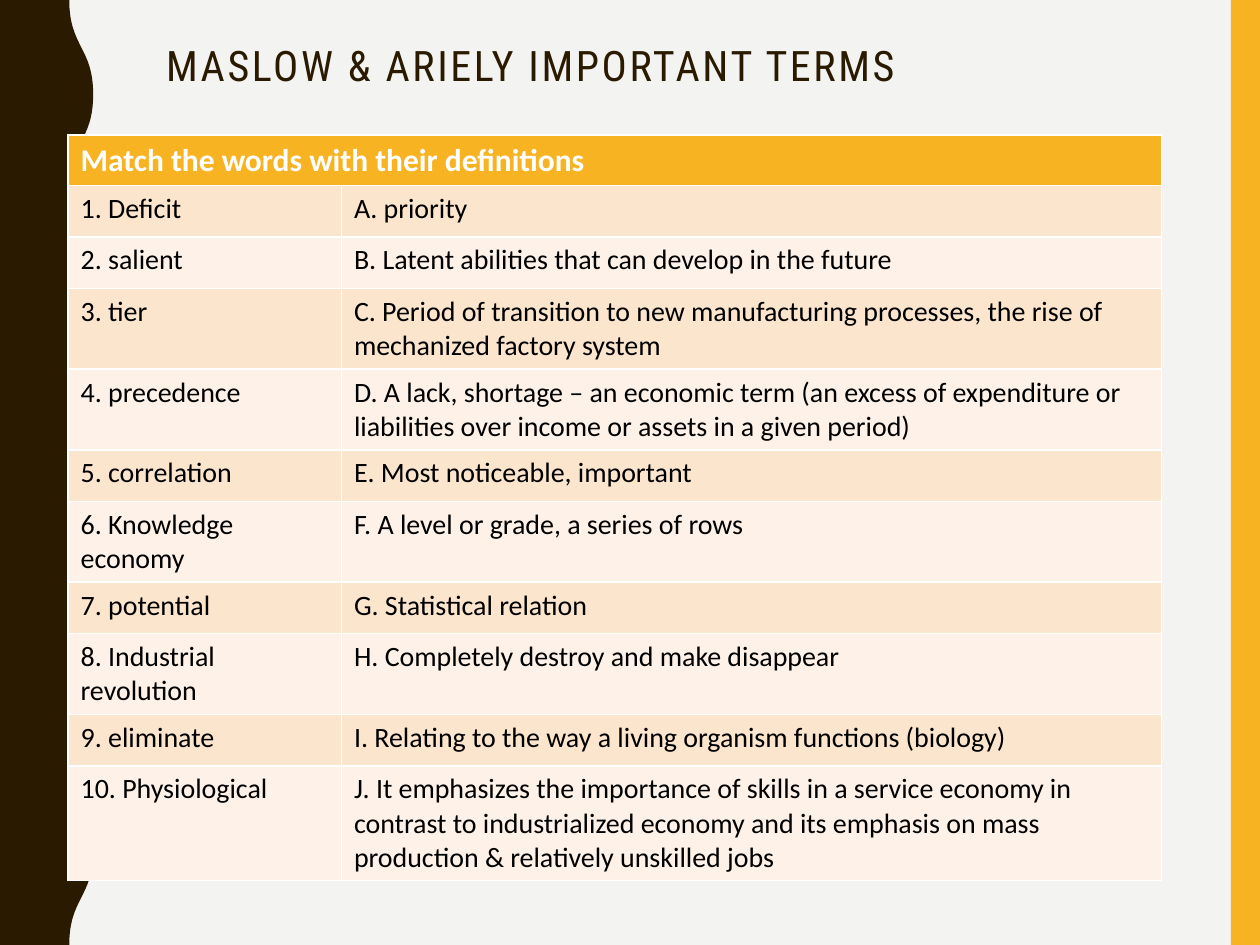
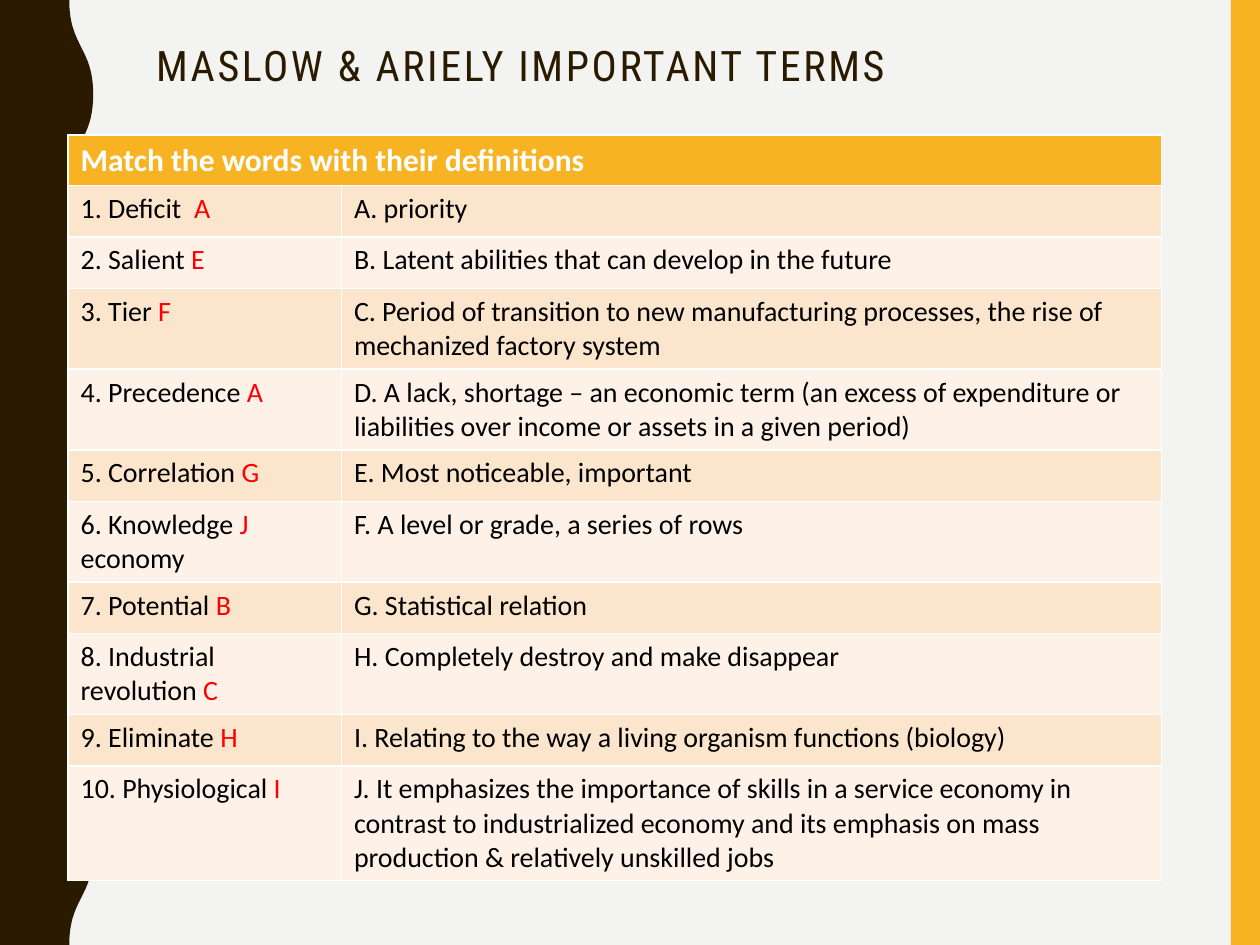
import pptx
import pptx.dml.color
import pptx.enum.shapes
import pptx.enum.text
import pptx.oxml.ns
import pptx.util
from lxml import etree

Inches, Pt = pptx.util.Inches, pptx.util.Pt
RGBColor = pptx.dml.color.RGBColor
qn = pptx.oxml.ns.qn

TITLE = "MASLOW & ARIELY IMPORTANT TERMS"
HEADING = "Match the words with their definitions"
# term ("|" marks where its answer goes), answer, definition, lines of text in the row
ROWS = [
    ("Deficit  |", "A", "priority", 1),
    ("salient |", "E", "Latent abilities that can develop in the future", 1),
    ("tier |", "F", "Period of transition to new manufacturing processes, "
     "the rise of mechanized factory system", 2),
    ("precedence |", "A", "A lack, shortage – an economic term (an excess of "
     "expenditure or liabilities over income or assets in a given period)", 2),
    ("correlation |", "G", "Most noticeable, important", 1),
    ("Knowledge | economy", "J", "A level or grade, a series of rows", 2),
    ("potential |", "B", "Statistical relation", 1),
    ("Industrial revolution |", "C", "Completely destroy and make disappear", 2),
    ("eliminate |", "H", "Relating to the way a living organism functions (biology)", 1),
    ("Physiological |", "I", "It emphasizes the importance of skills in a service "
     "economy in contrast to industrialized economy and its emphasis on mass "
     "production & relatively unskilled jobs", 3),
]
SLIDES = [  # title left, answers shown
    (1.22, False),
    (1.14, True),
]

PAPER = RGBColor(0xF3, 0xF3, 0xF2)
BROWN = RGBColor(0x2A, 0x1A, 0x00)
GOLD = RGBColor(0xF8, 0xB3, 0x23)
BANDS = RGBColor(0xFC, 0xE5, 0xCD), RGBColor(0xFE, 0xF2, 0xE8)
WHITE = RGBColor(0xFF, 0xFF, 0xFF)
BLACK = RGBColor(0, 0, 0)
RED = RGBColor(0xFF, 0, 0)
TITLE_FONT, BODY_FONT = "Roboto Condensed", "Calibri"

WIDTH, HEIGHT = 10, 7.5
STRIPE_W = 0.23
WAVE_MIN, WAVE_MAX, WAVE_STEP = 0.55, 0.74, 0.75
TABLE_LEFT, TABLE_TOP = 0.54, 1.07
COLUMNS = 2.17, 6.51
HEADER_H, MIN_ROW_H, LINE_H, CELL_PAD = 0.39, 0.41, 0.27, 0.1


def paint(shape, color):
    shape.fill.solid()
    shape.fill.fore_color.rgb = color
    shape.line.fill.background()
    shape.shadow.inherit = False


def style_run(r, size, color, font=BODY_FONT, bold=False):
    r.font.size = Pt(size)
    r.font.name = font
    r.font.bold = bold
    r.font.color.rgb = color


def add_wave(s):
    """Add the left band; its right edge swings in one S-curve per step."""
    steps = round(HEIGHT / WAVE_STEP)
    edge = [(Inches(WAVE_MAX if i % 2 else WAVE_MIN), Inches(i * WAVE_STEP))
            for i in range(steps + 1)]
    builder = s.shapes.build_freeform(*edge[0])
    builder.add_line_segments(edge[1:] + [(0, Inches(HEIGHT)), (0, 0)])
    wave = builder.convert_to_shape()
    paint(wave, BROWN)

    lines = list(wave._element.iter(qn("a:lnTo")))
    for line, (x0, y0), (x1, y1) in zip(lines, edge, edge[1:]):
        middle = (y0 + y1) // 2
        line.clear()
        curve = etree.Element(qn("a:cubicBezTo"))
        for x, y in ((x0, middle), (x1, middle), (x1, y1)):
            etree.SubElement(curve, qn("a:pt"), x=str(x), y=str(y))
        line.getparent().replace(line, curve)


def add_background(s):
    s.background.fill.solid()
    s.background.fill.fore_color.rgb = PAPER
    stripe = s.shapes.add_shape(
        pptx.enum.shapes.MSO_SHAPE.RECTANGLE, Inches(WIDTH - STRIPE_W), 0,
        Inches(STRIPE_W), Inches(HEIGHT))
    paint(stripe, GOLD)
    add_wave(s)


def add_title(s, left):
    sp = s.shapes.add_textbox(Inches(left), Inches(0.31), Inches(8.17), Inches(0.54))
    tf = sp.text_frame
    tf.word_wrap = True
    tf.vertical_anchor = pptx.enum.text.MSO_ANCHOR.TOP
    p = tf.paragraphs[0]
    p.text = TITLE
    p.line_spacing = 0.9
    r = p.runs[0]
    style_run(r, 24, BROWN, TITLE_FONT)
    r.font._element.set("spc", "150")


def fill_cell(cell, color, runs, size, bold=False):
    """Fill a cell with colour and (text, colour) runs."""
    cell.fill.solid()
    cell.fill.fore_color.rgb = color
    p = cell.text_frame.paragraphs[0]
    for text, text_color in runs:
        r = p.add_run()
        r.text = text
        style_run(r, size, text_color, bold=bold)


def term_runs(number, term, answer, answered):
    before, after = term.split("|")
    if not answered:
        return [(f"{number}. {before.rstrip()}{after}", BLACK)]
    before = before[0].upper() + before[1:]
    runs = [(f"{number}. {before}", BLACK), (answer, RED), (after, BLACK)]
    return [run for run in runs if run[0]]


def add_terms_table(s, answered):
    """Add the table; its default style draws the white cell borders."""
    heights = [HEADER_H] + [max(MIN_ROW_H, CELL_PAD + LINE_H * row[-1]) for row in ROWS]
    table = s.shapes.add_table(
        len(heights), len(COLUMNS), Inches(TABLE_LEFT), Inches(TABLE_TOP),
        Inches(sum(COLUMNS)), Inches(sum(heights))).table
    for column, width in zip(table.columns, COLUMNS):
        column.width = Inches(width)
    for row, height in zip(table.rows, heights):
        row.height = Inches(height)

    table.cell(0, 0).merge(table.cell(0, 1))
    fill_cell(table.cell(0, 0), GOLD, [(HEADING, WHITE)], 18, bold=True)
    for n, (term, answer, definition, _) in enumerate(ROWS, 1):
        band = BANDS[(n - 1) % 2]
        letter = "ABCDEFGHIJ"[n - 1]
        fill_cell(table.cell(n, 0), band, term_runs(n, term, answer, answered), 16)
        fill_cell(table.cell(n, 1), band, [(f"{letter}. {definition}", BLACK)], 16)


def main():
    prs = pptx.Presentation()
    prs.slide_width, prs.slide_height = Inches(WIDTH), Inches(HEIGHT)
    for title_left, answered in SLIDES:
        s = prs.slides.add_slide(prs.slide_layouts[6])
        add_background(s)
        add_title(s, title_left)
        add_terms_table(s, answered)
    prs.save("out.pptx")


if __name__ == "__main__":
    main()
